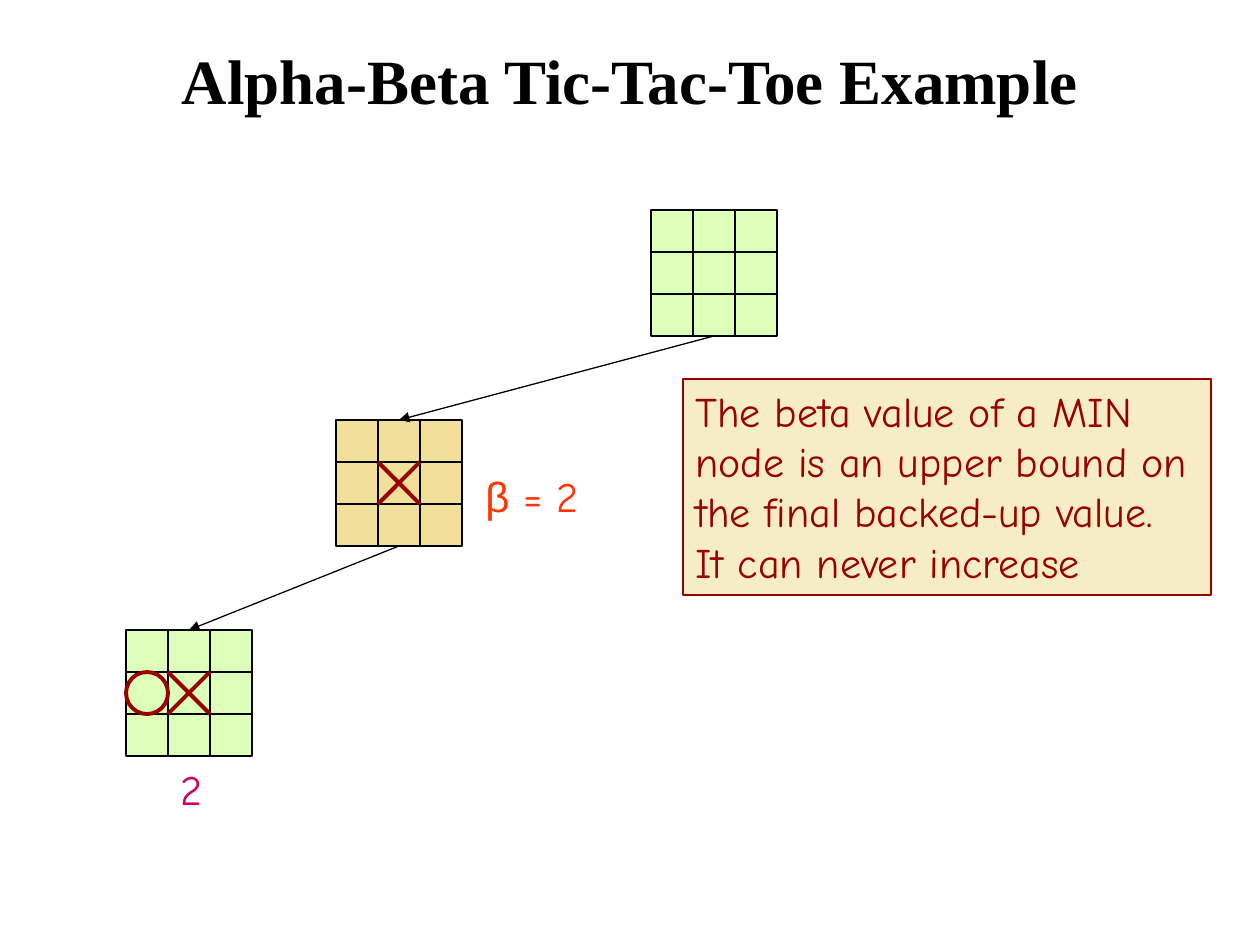
from lxml.etree import SubElement
from pptx import Presentation
from pptx.dml.color import RGBColor
from pptx.enum.shapes import MSO_CONNECTOR, MSO_SHAPE
from pptx.enum.text import MSO_ANCHOR, MSO_AUTO_SIZE, PP_ALIGN
from pptx.oxml.ns import qn
from pptx.util import Emu, Pt

EMU_PER_PX = 914400 / 126
CELL = 42
BOARD = 3 * CELL
BLACK, DARK_RED = "000000", "990000"
GREEN, TAN, CREAM = "DCFFB9", "F0E09A", "F6EDC6"
HAND_FONT = "Comic Neue"


def px(length):
    return Emu(round(length * EMU_PER_PX))


def color(hex_string):
    return RGBColor.from_string(hex_string)


def style_line(shape, hex_string, width):
    shape.line.color.rgb = color(hex_string)
    shape.line.width = Pt(width)


def style_run(run, font, size, hex_string, bold=False):
    run.font.name = font
    run.font.size = Pt(size)
    run.font.color.rgb = color(hex_string)
    run.font.bold = bold


def add_line(shapes, start, end, hex_string=BLACK, width=0.75):
    line = shapes.add_connector(MSO_CONNECTOR.STRAIGHT, *map(px, start + end))
    style_line(line, hex_string, width)
    SubElement(line._element.spPr, qn("a:effectLst"))
    return line


def add_outline(shapes, kind, left, top, width, height, line_color, line_width, fill=None):
    shape = shapes.add_shape(kind, px(left), px(top), px(width), px(height))
    shape.shadow.inherit = False
    style_line(shape, line_color, line_width)
    if fill:
        shape.fill.solid()
        shape.fill.fore_color.rgb = color(fill)
    else:
        shape.fill.background()
    return shape


def add_board(slide, left, top, fill, marks=()):
    """Draw a board with marks given as (symbol, column, row); return its square."""
    shapes = slide.shapes.add_group_shape().shapes
    square = add_outline(shapes, MSO_SHAPE.RECTANGLE, left, top, BOARD, BOARD, BLACK, 0.75, fill)
    for offset in (CELL, 2 * CELL):
        add_line(shapes, (left + offset, top), (left + offset, top + BOARD))
        add_line(shapes, (left, top + offset), (left + BOARD, top + offset))
    for symbol, column, row in marks:
        x, y = left + column * CELL, top + row * CELL
        if symbol == "O":
            add_outline(shapes, MSO_SHAPE.OVAL, x, y, CELL, CELL, DARK_RED, 2.25)
        else:
            add_line(shapes, (x, y), (x + CELL, y + CELL), DARK_RED, 2.25)
            add_line(shapes, (x, y + CELL), (x + CELL, y), DARK_RED, 2.25)
    return square


def add_move(slide, parent, child):
    """Point an arrow from the parent board to the child board."""
    arrow = add_line(slide.shapes, (0, 0), (0, 0))
    arrow.begin_connect(parent, 2)
    arrow.end_connect(child, 0)
    SubElement(arrow.line._get_or_add_ln(), qn("a:tailEnd"), type="triangle")


def fit_text(shape):
    shape.text_frame.word_wrap = False
    shape.text_frame.auto_size = MSO_AUTO_SIZE.SHAPE_TO_FIT_TEXT


def add_label(slide, left, top, width, height, parts, hex_string):
    """Add a one-line value made of (text, font) parts."""
    label = slide.shapes.add_textbox(px(left), px(top), px(width), px(height))
    fit_text(label)
    for text, font in parts:
        run = label.text_frame.paragraphs[0].add_run()
        run.text = text
        style_run(run, font, 24, hex_string)


def add_note(slide, left, top, width, height, lines):
    note = add_outline(slide.shapes, MSO_SHAPE.RECTANGLE, left, top, width, height,
                       DARK_RED, 0.75, CREAM)
    fit_text(note)
    note.text_frame.vertical_anchor = MSO_ANCHOR.TOP
    note.text_frame.text = "\n".join(lines)
    for paragraph in note.text_frame.paragraphs:
        paragraph.alignment = PP_ALIGN.LEFT
        style_run(paragraph.runs[0], HAND_FONT, 24, DARK_RED)


def set_title(slide, left, top, width, height, text):
    title = slide.shapes.title
    title.left, title.top, title.width, title.height = map(px, (left, top, width, height))
    title.text_frame.text = text
    title.text_frame.vertical_anchor = MSO_ANCHOR.MIDDLE
    paragraph = title.text_frame.paragraphs[0]
    paragraph.alignment = PP_ALIGN.CENTER
    style_run(paragraph.runs[0], "Times New Roman", 36, BLACK, bold=True)


def main():
    presentation = Presentation()
    presentation.slide_width, presentation.slide_height = px(1260), px(945)
    slide = presentation.slides.add_slide(presentation.slide_layouts[5])

    set_title(slide, 94, 0, 1072, 158, "Alpha-Beta Tic-Tac-Toe Example")
    root = add_board(slide, 651, 210, GREEN)
    min_node = add_board(slide, 336, 420, TAN, [("X", 1, 1)])
    leaf = add_board(slide, 126, 630, GREEN, [("X", 1, 1), ("O", 0, 1)])
    add_move(slide, root, min_node)
    add_move(slide, min_node, leaf)

    add_label(slide, 473, 464, 120, 63, [("β", "Arial"), (" = 2", HAND_FONT)], "FF3300")
    add_label(slide, 168, 757, 50, 63, [("2", HAND_FONT)], "CC0066")
    add_note(slide, 683, 379, 528, 216, [
        "The beta value of a MIN",
        "node is an upper bound on",
        "the final backed-up value.",
        "It can never increase",
    ])
    presentation.save("out.pptx")


if __name__ == "__main__":
    main()
